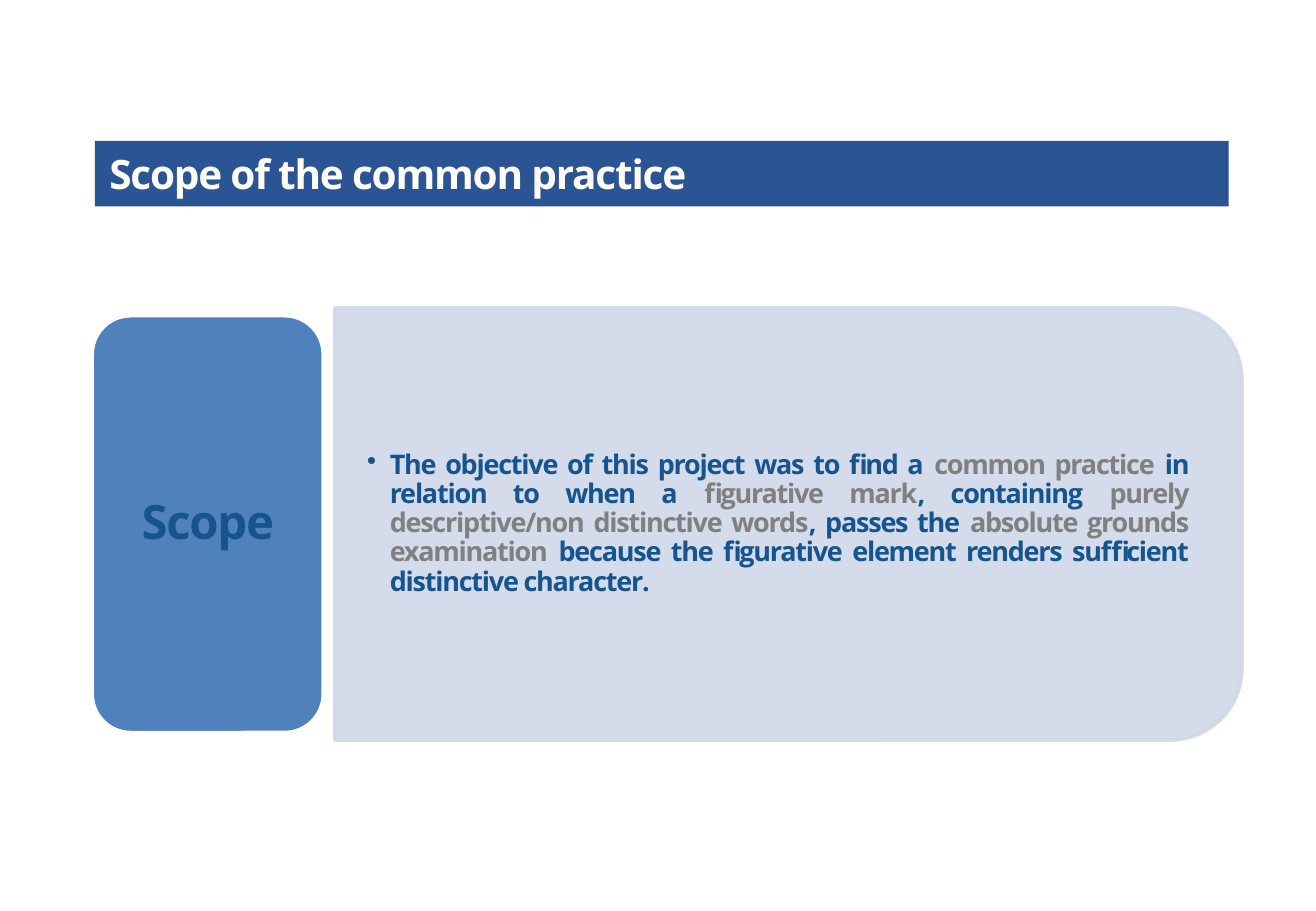
from lxml import etree
from pptx import Presentation
from pptx.dml.color import RGBColor
from pptx.enum.shapes import MSO_SHAPE
from pptx.enum.text import MSO_ANCHOR, PP_ALIGN
from pptx.oxml.ns import qn
from pptx.util import Pt

RECT = MSO_SHAPE.RECTANGLE
ROUNDED = MSO_SHAPE.ROUNDED_RECTANGLE
TOP_ROUNDED = MSO_SHAPE.ROUND_2_SAME_RECTANGLE
MIDDLE = MSO_ANCHOR.MIDDLE
LEFT, CENTER, JUSTIFY = PP_ALIGN.LEFT, PP_ALIGN.CENTER, PP_ALIGN.JUSTIFY

THEME = {
    "font": "Open Sans",
    "spacing": -70,
    "title_size": 24, "label_size": 28, "body_size": 16,
    "bar": "2A5494", "label_fill": "4F81BD", "panel": "D0D8E8",
    "white": "FFFFFF", "title": "FFFCF6", "text": "15548D", "accent": "808080",
}

# Each run is (text, theme colour).
TITLE = [("Scope of the common practice", "title")]
LABEL = [("Scope", "text")]
OBJECTIVE = [
    ("The objective of this project was to find a ", "text"),
    ("common practice ", "accent"),
    ("in relation to when a ", "text"),
    ("figurative mark", "accent"),
    (", containing ", "text"),
    ("purely descriptive/non distinctive words", "accent"),
    (", passes the ", "text"),
    ("absolute grounds examination ", "accent"),
    ("because the figurative element renders sufficient distinctive character.", "text"),
]

# Left, top, width, height in points.
SLIDE_SIZE = (779.76, 540)
BAR = (56.2, 83.5, 671.8, 38.9)
LABEL_BOX = (54.7, 187.2, 136.8, 247)
PANEL = (198.2, 182.5, 537.8, 256.3)
BODY = (198, 195.1, 525.6, 231.1)
BULLET_INDENT = 13.5


def rgb(name):
    return RGBColor.from_string(THEME[name])


def add_block(slide, kind, box, fill, line=None):
    s = slide.shapes.add_shape(kind, *map(Pt, box))
    s.shadow.inherit = False
    s.fill.solid()
    s.fill.fore_color.rgb = rgb(fill)
    if line:
        s.line.color.rgb = rgb(line)
        s.line.width = Pt(2)
    else:
        s.line.fill.background()
    return s


def add_panel(slide, box, opacity):
    """Turn a top-rounded shape by 90 degrees so that its right side is round."""
    x, y, w, h = box
    upright = (x + (w - h) / 2, y + (h - w) / 2, h, w)
    s = add_block(slide, TOP_ROUNDED, upright, "panel", "panel")
    s.rotation = 90
    for color in s._element.spPr.iter(qn("a:srgbClr")):
        etree.SubElement(color, qn("a:alpha"), val=str(opacity * 1000))


def add_bullet(p, indent):
    pPr = p._p.get_or_add_pPr()
    pPr.set("marL", str(Pt(indent)))
    pPr.set("indent", str(-Pt(indent)))
    etree.SubElement(pPr, qn("a:buChar"), char="•")


def write(shape, runs, size, align, insets, line_spacing=1.0, bullet=False):
    tf = shape.text_frame
    tf.word_wrap = True
    tf.vertical_anchor = MIDDLE
    tf.margin_left = tf.margin_right = Pt(insets[0])
    tf.margin_top = tf.margin_bottom = Pt(insets[1])
    p = tf.paragraphs[0]
    p.alignment = align
    p.line_spacing = line_spacing
    if bullet:
        add_bullet(p, BULLET_INDENT)
    for text, color in runs:
        r = p.add_run()
        r.text = text
        r.font.name = THEME["font"]
        r.font.size = Pt(THEME[size])
        r.font.bold = True
        r.font.color.rgb = rgb(color)
        r._r.get_or_add_rPr().set("spc", str(THEME["spacing"]))


def main():
    prs = Presentation()
    prs.slide_width, prs.slide_height = map(Pt, SLIDE_SIZE)
    slide = prs.slides.add_slide(prs.slide_layouts[6])

    add_panel(slide, PANEL, opacity=90)
    body = slide.shapes.add_textbox(*map(Pt, BODY))
    write(body, OBJECTIVE, "body_size", JUSTIFY, (19.5, 10), 0.9, bullet=True)

    label = add_block(slide, ROUNDED, LABEL_BOX, "label_fill", "white")
    write(label, LABEL, "label_size", CENTER, (8.6, 4.3), 0.9)

    bar = add_block(slide, RECT, BAR, "bar")
    write(bar, TITLE, "title_size", LEFT, (8.6, 0))

    prs.save("out.pptx")


if __name__ == "__main__":
    main()
